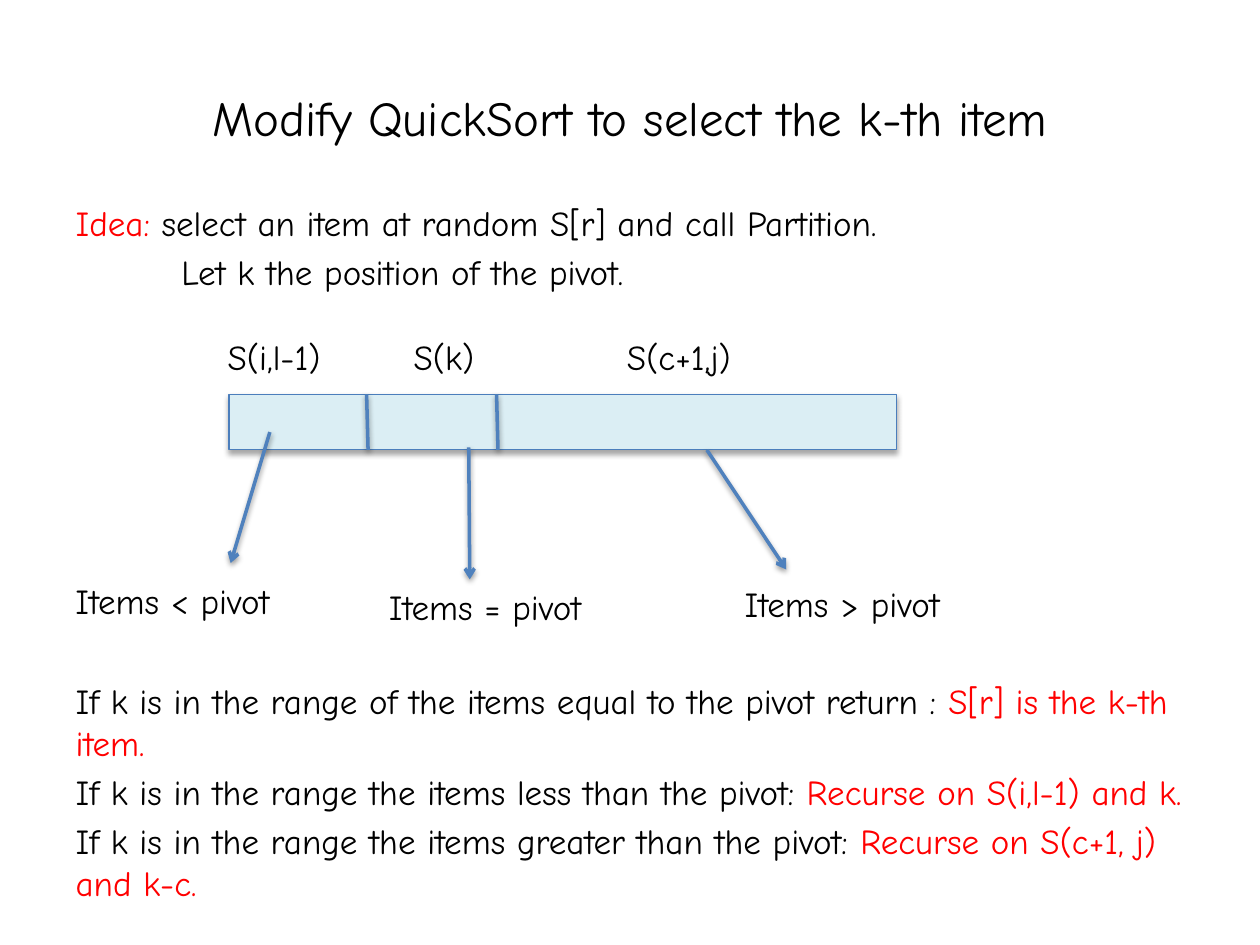
"""Build the slide on choosing the k-th item with QuickSort."""
from lxml.etree import SubElement
from pptx import Presentation
from pptx.dml.color import RGBColor
from pptx.enum.shapes import MSO_CONNECTOR, MSO_SHAPE
from pptx.enum.text import MSO_ANCHOR, MSO_AUTO_SIZE, PP_ALIGN
from pptx.oxml.ns import qn
from pptx.util import Cm, Pt

FONT = "Comic Neue"
BLACK = RGBColor(0, 0, 0)
RED = RGBColor(255, 0, 0)
PALE = RGBColor(0xDB, 0xEE, 0xF4)
EDGE = RGBColor(0x4B, 0x7E, 0xBC)
BLUE = RGBColor(0x4F, 0x81, 0xBD)

TITLE = "Modify QuickSort to select the k-th item"
BODY = [
    (4, 0, [("Idea: ", RED), ("select an item at random S[r] and call Partition.", BLACK)]),
    (4, 2.13, [("Let k the position of the pivot.", BLACK)]),
    (220.8, 0, [("If k is in the range of the items equal to the pivot return : ", BLACK),
                ("S[r] is the k-th item.", RED)]),
    (4, 0, [("If k is in the range the items less than the pivot: ", BLACK),
            ("Recurse on S(i,l-1) and k.", RED)]),
    (4, 0, [("If k is in the range the items greater than the pivot: ", BLACK),
            ("Recurse on S(c+1, j) and k-c.", RED)]),
]
LEFT, WIDE = 1.27, 22.86
BAR_X, BAR_Y, BAR_W, BAR_H = 4.62, 7.95, 13.46, 1.12
BAR_END = BAR_Y + BAR_H
CUTS = (7.39, 10.01)
ARROWS = [(5.44, 8.71, 4.65, 11.35), (9.45, 9.02, 9.47, 11.68),
          (14.25, BAR_END, 15.85, 11.48)]
LABEL_Y = 6.64
NOTES = [("S(i,l-1)", 4.34, LABEL_Y, 3), ("S(k)", 8.09, LABEL_Y, 2),
         ("S(c+1,j)", 12.39, LABEL_Y, 3),
         ("Items < pivot", LEFT, 11.56, 5.16), ("Items = pivot", 7.59, 11.68, 5.56),
         ("Items > pivot", 14.76, 11.61, 5.13)]


def place(shape, *box):
    shape.left, shape.top, shape.width, shape.height = map(Cm, box)


def style(para, size):
    para.font.name = FONT
    para.font.size = Pt(size)
    para.font.color.rgb = BLACK


def add_line(slide, *ends):
    line = slide.shapes.add_connector(MSO_CONNECTOR.STRAIGHT, *map(Cm, ends))
    line.line.color.rgb = BLUE
    line.line.width = Pt(2)
    return line


def fill_body(frame):
    frame.word_wrap = True
    frame.auto_size = MSO_AUTO_SIZE.NONE
    for num, (gap, indent, parts) in enumerate(BODY):
        para = frame.add_paragraph() if num else frame.paragraphs[0]
        para.space_before = Pt(gap)
        props = para._p.get_or_add_pPr()
        props.set("marL", str(Cm(indent)))
        props.set("indent", "0")
        SubElement(props, qn("a:buNone"))
        style(para, 20)
        for text, color in parts:
            run = para.add_run()
            run.text = text
            run.font.color.rgb = color


def draw_bar(slide):
    bar = slide.shapes.add_shape(
        MSO_SHAPE.RECTANGLE, *map(Cm, (BAR_X, BAR_Y, BAR_W, BAR_H)))
    bar.fill.solid()
    bar.fill.fore_color.rgb = PALE
    bar.line.color.rgb = EDGE
    bar.line.width = Pt(0.75)
    for cut in CUTS:
        add_line(slide, cut, BAR_Y, cut + 0.03, BAR_END)
    for ends in ARROWS:
        arrow = add_line(slide, *ends)
        SubElement(arrow.line._get_or_add_ln(), qn("a:tailEnd"), type="arrow")


def main():
    deck = Presentation()
    deck.slide_width, deck.slide_height = Cm(25.4), Cm(19.05)
    slide = deck.slides.add_slide(deck.slide_layouts[1])
    title, body = slide.placeholders
    place(title, LEFT, 0.76, WIDE, 3.18)
    title.text_frame.text = TITLE
    title.text_frame.vertical_anchor = MSO_ANCHOR.MIDDLE
    head = title.text_frame.paragraphs[0]
    head.alignment = PP_ALIGN.CENTER
    style(head, 28)
    place(body, LEFT, 3.94, WIDE, 14.94)
    fill_body(body.text_frame)
    draw_bar(slide)
    for text, left, top, width in NOTES:
        note = slide.shapes.add_textbox(*map(Cm, (left, top, width, 1.12)))
        note.text_frame.word_wrap = True
        note.text_frame.text = text
        style(note.text_frame.paragraphs[0], 20)
    deck.save("out.pptx")


if __name__ == "__main__":
    main()
